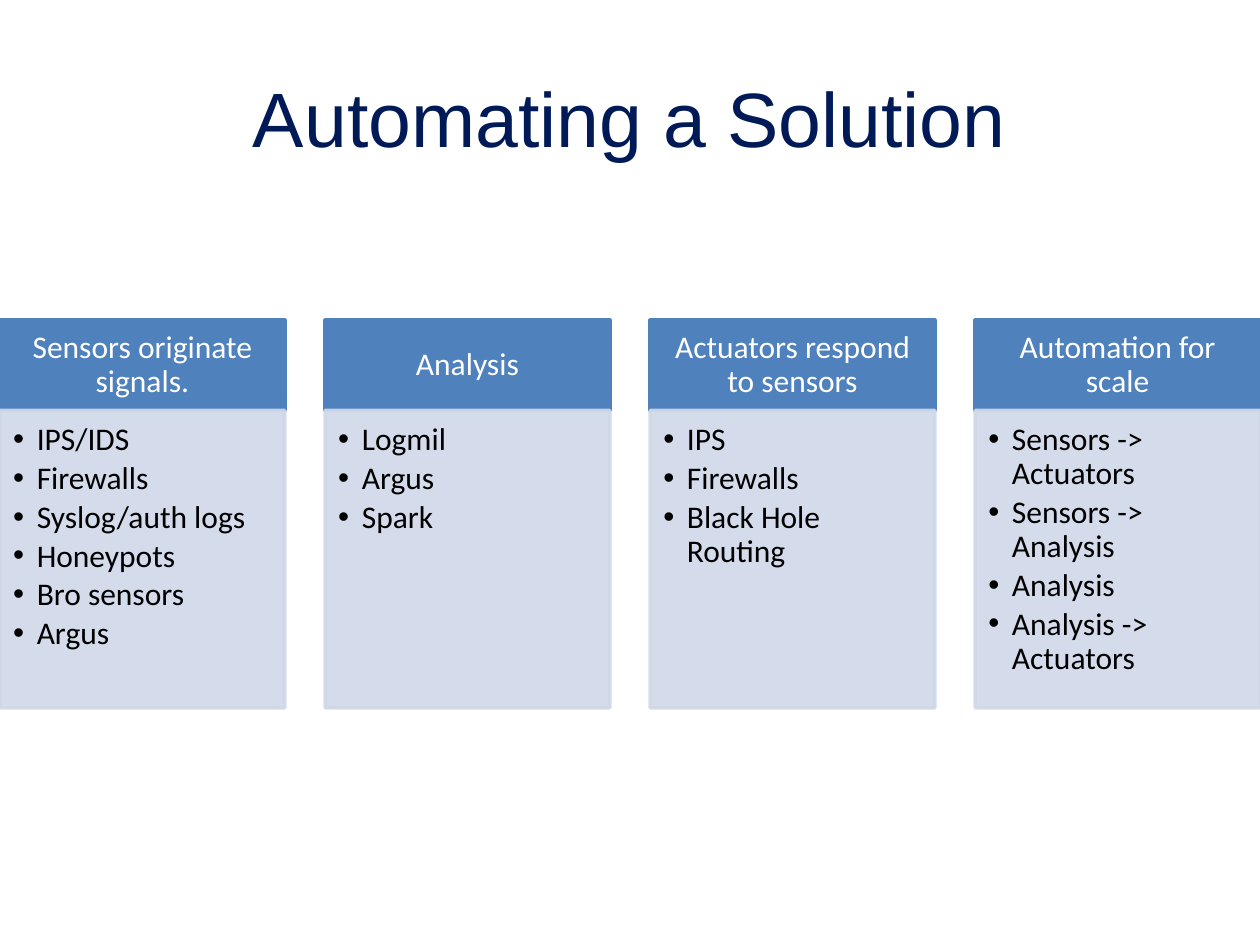
from lxml.etree import SubElement
from pptx import Presentation
from pptx.dml.color import RGBColor
from pptx.enum.shapes import MSO_SHAPE
from pptx.enum.text import MSO_ANCHOR, PP_ALIGN
from pptx.oxml.ns import qn
from pptx.util import Pt

TITLE = "Automating a Solution"
COLUMNS = [
    ("Sensors originate signals.",
     ["IPS/IDS", "Firewalls", "Syslog/auth logs", "Honeypots", "Bro sensors", "Argus"]),
    ("Analysis", ["Logmil", "Argus", "Spark"]),
    ("Actuators respond to sensors", ["IPS", "Firewalls", "Black Hole Routing"]),
    ("Automation for scale",
     ["Sensors -> Actuators", "Sensors -> Analysis", "Analysis", "Analysis -> Actuators"]),
]

NAVY = RGBColor(0x00, 0x1A, 0x57)
BLUE = RGBColor(0x4F, 0x81, 0xBD)
PALE_BLUE = RGBColor(0xD0, 0xD8, 0xE8)
WHITE = RGBColor(0xFF, 0xFF, 0xFF)
BLACK = RGBColor(0, 0, 0)

SLIDE_WIDTH, SLIDE_HEIGHT = 720, 540
COLUMN_WIDTH = 162.75
COLUMN_STEP = (SLIDE_WIDTH - COLUMN_WIDTH) / (len(COLUMNS) - 1)
HEADER_TOP, HEADER_HEIGHT = 183, 51.5
BODY_TOP, BODY_HEIGHT = HEADER_TOP + HEADER_HEIGHT, 170
BULLET_INDENT = 13.5


def add_panel(slide, left, top, height, color, margins, anchor):
    panel = slide.shapes.add_shape(
        MSO_SHAPE.RECTANGLE, Pt(left), Pt(top), Pt(COLUMN_WIDTH), Pt(height))
    panel.shadow.inherit = False
    panel.fill.solid()
    panel.fill.fore_color.rgb = color
    panel.line.color.rgb = color
    panel.line.width = Pt(2)
    frame = panel.text_frame
    frame.word_wrap = True
    frame.vertical_anchor = anchor
    (frame.margin_left, frame.margin_top,
     frame.margin_right, frame.margin_bottom) = map(Pt, margins)
    return panel


def set_opacity(shape, percent):
    """Apply one opacity to both the fill and the outline."""
    for color in shape._element.spPr.iter(qn("a:srgbClr")):
        SubElement(color, qn("a:alpha"), val=str(percent * 1000))


def add_bullet(paragraph):
    properties = paragraph._p.get_or_add_pPr()
    properties.set("marL", str(Pt(BULLET_INDENT)))
    properties.set("indent", str(-Pt(BULLET_INDENT)))
    SubElement(properties, qn("a:buFont"), typeface="Arial")
    SubElement(properties, qn("a:buChar"), char="•")


def format_text(paragraph, font_name, size, color, align):
    paragraph.alignment = align
    for run in paragraph.runs:
        run.font.name = font_name
        run.font.size = Pt(size)
        run.font.color.rgb = color


def add_column(slide, left, heading, items):
    header = add_panel(slide, left, HEADER_TOP, HEADER_HEIGHT, BLUE,
                       (10, 5.75, 10, 5.75), MSO_ANCHOR.MIDDLE)
    header.text_frame.text = heading
    heading_line = header.text_frame.paragraphs[0]
    heading_line.line_spacing = 0.9
    format_text(heading_line, "Calibri", 18, WHITE, PP_ALIGN.CENTER)

    body = add_panel(slide, left, BODY_TOP, BODY_HEIGHT, PALE_BLUE,
                     (7.5, 7.5, 10, 11.25), MSO_ANCHOR.TOP)
    set_opacity(body, 90)
    body.text_frame.text = "\n".join(items)
    for item in body.text_frame.paragraphs:
        add_bullet(item)
        item.line_spacing = 0.9
        item.space_after = Pt(2.7)
        format_text(item, "Calibri", 18, BLACK, PP_ALIGN.LEFT)


def main():
    presentation = Presentation()
    presentation.slide_width = Pt(SLIDE_WIDTH)
    presentation.slide_height = Pt(SLIDE_HEIGHT)
    slide = presentation.slides.add_slide(presentation.slide_layouts[5])

    title = slide.shapes.title
    title.left, title.top, title.width, title.height = map(Pt, (36, 21.6, 648, 90))
    title.text_frame.text = TITLE
    title.text_frame.vertical_anchor = MSO_ANCHOR.MIDDLE
    format_text(title.text_frame.paragraphs[0], "Arial", 44, NAVY, PP_ALIGN.CENTER)

    for index, (heading, items) in enumerate(COLUMNS):
        add_column(slide, index * COLUMN_STEP, heading, items)

    presentation.save("out.pptx")


if __name__ == "__main__":
    main()
